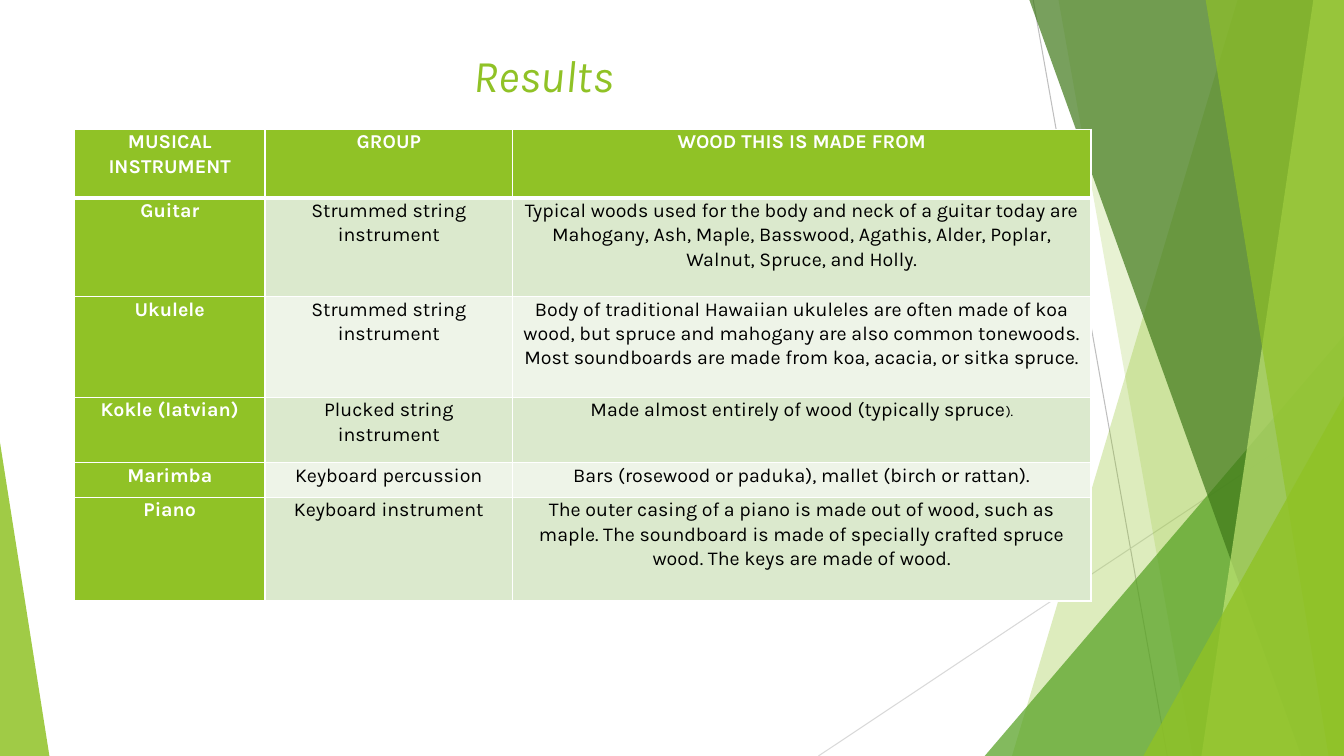
from dataclasses import dataclass

from lxml import etree
from pptx import Presentation
from pptx.dml.color import RGBColor
from pptx.enum.shapes import MSO_CONNECTOR, MSO_SHAPE
from pptx.enum.text import MSO_ANCHOR, PP_ALIGN
from pptx.oxml.ns import qn
from pptx.util import Pt

FONT = "Karla"
WHITE = RGBColor(0xFF, 0xFF, 0xFF)
BLACK = RGBColor(0x00, 0x00, 0x00)
LIME = RGBColor(0x90, 0xC2, 0x26)
PALE_LIME = RGBColor(0xC0, 0xE4, 0x74)
GREEN = RGBColor(0x54, 0xA0, 0x21)
DARK_GREEN = RGBColor(0x3F, 0x78, 0x19)
BAND_DARK = RGBColor(0xDB, 0xE9, 0xCD)
BAND_LIGHT = RGBColor(0xEE, 0xF4, 0xE8)
GREY = RGBColor(0xBF, 0xBF, 0xBF)
LIGHT_GREY = RGBColor(0xD9, 0xD9, 0xD9)

WIDTH, HEIGHT = 960, 540
TOP = -0.6
COLUMNS = (136, 177, 413)
HEADER_HEIGHT = 49
HEADERS = ("MUSICAL INSTRUMENT", "GROUP", "WOOD THIS IS MADE FROM")


@dataclass
class Ray:
    start: tuple[float, float]
    end: tuple[float, float]
    color: RGBColor


@dataclass
class Blade:
    """Panel that runs to the right edge, with a slanted left side."""
    top_x: float
    bottom_x: float
    color: RGBColor
    opacity: int


@dataclass
class Corner:
    """Right triangle standing on the bottom edge; peak is 0 (left) or 1 (right)."""
    left: float
    top: float
    width: float
    peak: int
    color: RGBColor
    opacity: int


@dataclass
class Instrument:
    name: str
    group: str
    wood: tuple[str, ...]
    height: float
    small_tail: str = ""


DECORATION = (
    Ray((738, 0), (833.8, HEIGHT), GREY),
    Ray((WIDTH, 290.2), (584.6, HEIGHT), LIGHT_GREY),
    Blade(884.2, 722.9, LIME, 30),
    Blade(756, 851.8, LIME, 20),
    Corner(703.4, 239.8, 256.6, 1, GREEN, 72),
    Blade(735.1, 929.5, DARK_GREEN, 70),
    Blade(938.2, 858.2, PALE_LIME, 70),
    Blade(861.1, 949, LIME, 65),
    Corner(816.7, 283, 143.3, 1, LIME, 80),
    Corner(0, 316.1, 35.3, 0, LIME, 85),
)

INSTRUMENTS = (
    Instrument("Guitar", "Strummed string instrument",
               ("Typical woods used for the body and neck of a guitar today "
                "are Mahogany, Ash, Maple, Basswood, Agathis, Alder, Poplar, "
                "Walnut, Spruce, and Holly.",), 70.6),
    Instrument("Ukulele", "Strummed string instrument",
               ("Body of traditional Hawaiian ukuleles are often made of koa "
                "wood, but spruce and mahogany are also common tonewoods.",
                "Most soundboards are made from koa, acacia, or sitka spruce."), 72),
    Instrument("Kokle (latvian)", "Plucked string instrument",
               ("Made almost entirely of wood (typically spruce",), 46.8, ")."),
    Instrument("Marimba", "Keyboard percussion",
               ("Bars (rosewood or paduka), mallet (birch or rattan).",), 24.5),
    Instrument("Piano", "Keyboard instrument",
               ("The outer casing of a piano is made out of wood, such as "
                "maple. The soundboard is made of specially crafted spruce "
                "wood. The keys are made of wood.",), 74.2),
)


def set_all(obj, values: dict) -> None:
    for name, value in values.items():
        setattr(obj, name, value)


def add_run(p, text: str, size: float, color: RGBColor, **style) -> None:
    r = p.add_run()
    r.text = text
    set_all(r.font, {"name": FONT, "size": Pt(size), **style})
    r.font.color.rgb = color


def paint(sp, color: RGBColor, opacity: int) -> None:
    sp.shadow.inherit = False
    sp.line.fill.background()
    sp.fill.solid()
    sp.fill.fore_color.rgb = color
    clr = sp.fill._xPr.find(f".//{qn('a:srgbClr')}")
    etree.SubElement(clr, qn("a:alpha"), val=str(opacity * 1000))


def add_ray(s, ray: Ray) -> None:
    ends = [Pt(v) for v in (*ray.start, *ray.end)]
    sp = s.shapes.add_connector(MSO_CONNECTOR.STRAIGHT, *ends)
    sp.line.color.rgb = ray.color
    sp.line.width = Pt(0.75)
    etree.SubElement(sp._element.spPr, qn("a:effectLst"))


def add_blade(s, blade: Blade) -> None:
    builder = s.shapes.build_freeform(Pt(blade.top_x), Pt(TOP))
    corners = ((WIDTH, TOP), (WIDTH, HEIGHT), (blade.bottom_x, HEIGHT))
    builder.add_line_segments([(Pt(x), Pt(y)) for x, y in corners], close=True)
    paint(builder.convert_to_shape(), blade.color, blade.opacity)


def add_corner(s, corner: Corner) -> None:
    box = (corner.left, corner.top, corner.width, HEIGHT - corner.top)
    sp = s.shapes.add_shape(MSO_SHAPE.ISOSCELES_TRIANGLE, *map(Pt, box))
    sp.adjustments[0] = corner.peak
    paint(sp, corner.color, corner.opacity)


def add_title(s) -> None:
    tf = s.shapes.add_textbox(Pt(53.3), Pt(28.8), Pt(676.8), Pt(48.2)).text_frame
    set_all(tf, {"word_wrap": True, "vertical_anchor": MSO_ANCHOR.MIDDLE})
    p = tf.paragraphs[0]
    p.alignment = PP_ALIGN.CENTER
    add_run(p, "Results ", 32.4, LIME, italic=True)


def add_borders(cell, top: float, bottom: float) -> None:
    tc_pr = cell._tc.get_or_add_tcPr()
    for side, width in (("L", 1), ("R", 1), ("T", top), ("B", bottom)):
        ln = etree.SubElement(tc_pr, qn(f"a:ln{side}"), w=str(Pt(width)))
        fill = etree.SubElement(ln, qn("a:solidFill"))
        etree.SubElement(fill, qn("a:srgbClr"), val=str(WHITE))


def fill_cell(cell, paragraphs: tuple[str, ...], fill: RGBColor, tail: str = "") -> None:
    strong = fill == LIME
    color = WHITE if strong else BLACK
    set_all(cell, {"margin_left": Pt(5.4), "margin_right": Pt(5.4),
                   "margin_top": 0, "margin_bottom": 0,
                   "vertical_anchor": MSO_ANCHOR.TOP})
    cell.fill.solid()
    cell.fill.fore_color.rgb = fill
    tf = cell.text_frame
    for i, text in enumerate(paragraphs):
        p = tf.add_paragraph() if i else tf.paragraphs[0]
        set_all(p, {"alignment": PP_ALIGN.CENTER, "line_spacing": 1.07})
        add_run(p, text, 14, color, bold=strong)
    if tail:
        add_run(p, tail, 10, color, bold=strong)


def add_results(s) -> None:
    heights = [HEADER_HEIGHT, *(item.height for item in INSTRUMENTS)]
    frame = s.shapes.add_table(len(heights), len(COLUMNS), Pt(53.3), Pt(92.2),
                               Pt(sum(COLUMNS)), Pt(sum(heights)))
    table = frame.table
    set_all(table, {"first_row": False, "horz_banding": False})
    for column, width in zip(table.columns, COLUMNS):
        column.width = Pt(width)
    for i, (row, height) in enumerate(zip(table.rows, heights)):
        row.height = Pt(height)
        for cell in row.cells:
            add_borders(cell, top=3 if i == 1 else 1, bottom=3 if i == 0 else 1)
    for cell, text in zip(table.rows[0].cells, HEADERS):
        fill_cell(cell, (text,), LIME)
    for i, item in enumerate(INSTRUMENTS):
        name, group, wood = table.rows[i + 1].cells
        band = BAND_LIGHT if i % 2 else BAND_DARK
        fill_cell(name, (item.name,), LIME)
        fill_cell(group, (item.group,), band)
        fill_cell(wood, item.wood, band, item.small_tail)


def main() -> None:
    prs = Presentation()
    set_all(prs, {"slide_width": Pt(WIDTH), "slide_height": Pt(HEIGHT)})
    s = prs.slides.add_slide(prs.slide_layouts[6])
    draw = {Ray: add_ray, Blade: add_blade, Corner: add_corner}
    for part in DECORATION:
        draw[type(part)](s, part)
    add_title(s)
    add_results(s)
    prs.save("out.pptx")


if __name__ == "__main__":
    main()
